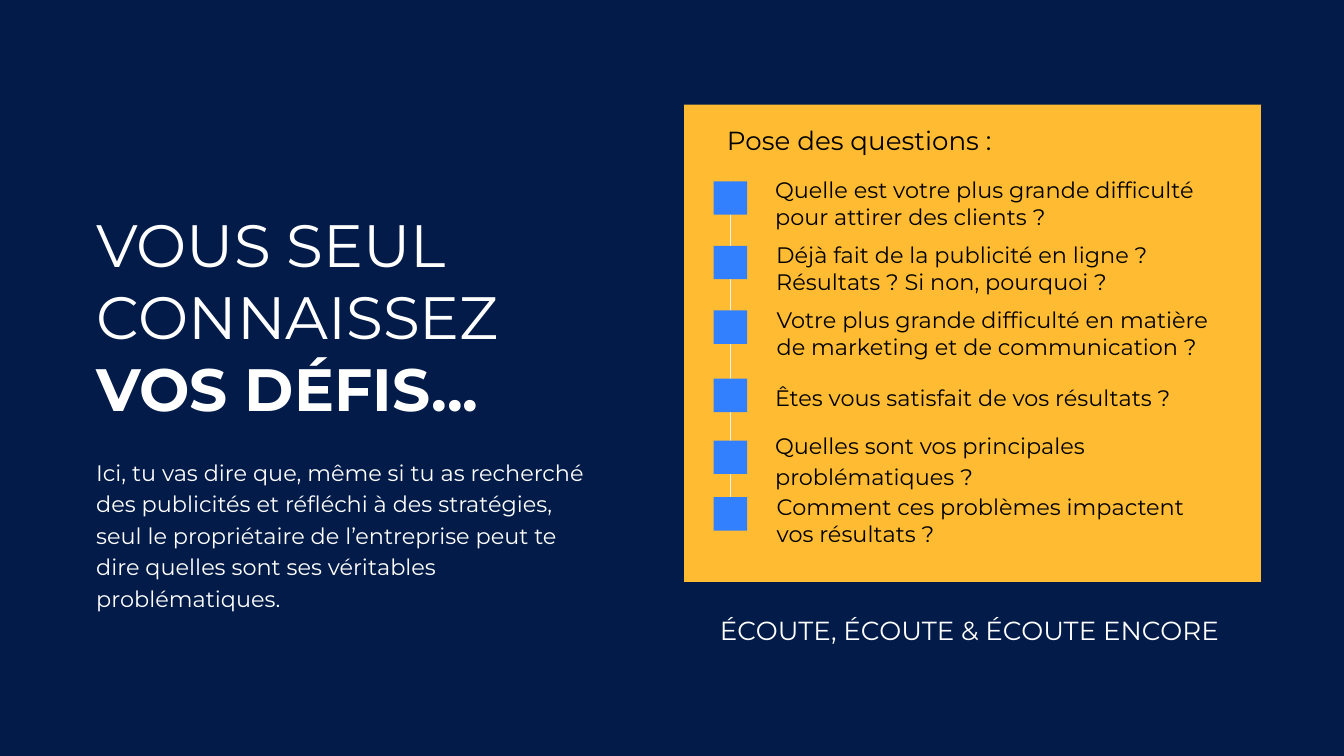
from dataclasses import dataclass

from lxml import etree
from pptx import Presentation
from pptx.dml.color import RGBColor
from pptx.enum import shapes, text
from pptx.oxml import ns
from pptx.util import Cm, Pt

NAVY, AMBER, BLUE = "031B49", "FFBC33", "3280FE"
WHITE, BLACK, PALE = "FFFFFF", "000000", "F2F2F2"
FONT = "Montserrat"
LOOSE = 1.17
MARKER_LEFT, MARKER_SIZE = 13.49, 0.63


@dataclass
class Box:
    """Left, top, width and height in centimetres."""
    left: float
    top: float
    width: float
    height: float

    def lengths(self) -> list:
        return [Cm(v) for v in (self.left, self.top, self.width, self.height)]


@dataclass
class Question:
    wording: str
    marker_top: float
    box: Box
    spacing: float | None = None


def paint(color_format, hex_color: str) -> None:
    color_format.rgb = RGBColor.from_string(hex_color)


def add_rectangle(slide, box: Box, color: str):
    rectangle = slide.shapes.add_shape(shapes.MSO_SHAPE.RECTANGLE, *box.lengths())
    rectangle.shadow.inherit = False
    rectangle.fill.solid()
    paint(rectangle.fill.fore_color, color)
    rectangle.line.fill.background()
    return rectangle


def add_text(slide, box: Box, runs: list, size: float, color: str,
             spacing: float | None = None, align=None, **frame_format) -> None:
    """Write one paragraph from (wording, bold) pairs."""
    frame = slide.shapes.add_textbox(*box.lengths()).text_frame
    settings = {
        "word_wrap": True,
        "auto_size": text.MSO_AUTO_SIZE.SHAPE_TO_FIT_TEXT,
        "margin_left": Cm(0.25), "margin_right": Cm(0.25),
        "margin_top": Cm(0.13), "margin_bottom": Cm(0.13),
    } | frame_format
    for name, value in settings.items():
        setattr(frame, name, value)
    paragraph = frame.paragraphs[0]
    for name, value in {"line_spacing": spacing, "alignment": align}.items():
        setattr(paragraph, name, value)
    for wording, bold in runs:
        run = paragraph.add_run()
        run.text = wording
        for name, value in {"name": FONT, "size": Pt(size), "bold": bold}.items():
            setattr(run.font, name, value)
        paint(run.font.color, color)


def add_timeline(slide, x: float, top: float, bottom: float):
    timeline = slide.shapes.add_connector(
        shapes.MSO_CONNECTOR.STRAIGHT, Cm(x), Cm(top), Cm(x), Cm(bottom))
    timeline.line.width = Pt(1)
    paint(timeline.line.color, PALE)
    etree.SubElement(timeline._element.spPr, ns.qn("a:effectLst"))
    return timeline


QUESTIONS = [
    Question("Quelle est votre plus grande difficulté pour attirer des clients ?",
             3.43, Box(14.4, 3.2, 8.97, 1.27)),
    Question("Déjà fait de la publicité en ligne ? Résultats ? Si non, pourquoi ?",
             4.65, Box(14.42, 4.43, 8.97, 1.27)),
    Question("Votre plus grande difficulté en matière de marketing et de communication ?",
             5.87, Box(14.43, 5.66, 8.97, 1.27)),
    Question("Êtes vous satisfait de vos résultats ?",
             7.16, Box(14.4, 7.13, 8.97, 0.76)),
    Question("Quelles sont vos principales problématiques ?",
             8.33, Box(14.4, 7.95, 8.97, 1.37), LOOSE),
    Question("Comment ces problèmes impactent vos résultats ?",
             9.4, Box(14.43, 9.2, 8.97, 1.27)),
]


def main() -> None:
    deck = Presentation()
    deck.slide_width, deck.slide_height = Cm(25.4), Cm(14.29)
    slide = deck.slides.add_slide(deck.slide_layouts[6])
    slide.background.fill.solid()
    paint(slide.background.fill.fore_color, NAVY)

    # Message on the left
    add_text(slide, Box(1.57, 2.64, 10.36, 5.61),
             [("VOUS SEUL CONNAISSEZ ", None), ("VOS DÉFIS...", True)], 32, WHITE,
             auto_size=text.MSO_AUTO_SIZE.NONE,
             vertical_anchor=text.MSO_ANCHOR.BOTTOM,
             margin_top=Cm(0.25), margin_bottom=Cm(0.25))
    add_text(slide, Box(1.57, 8.46, 9.91, 3.18),
             [("Ici, tu vas dire que, même si tu as recherché des publicités et réfléchi "
               "à des stratégies, seul le propriétaire de l’entreprise peut te dire "
               "quelles sont ses véritables problématiques.", None)], 12, WHITE, LOOSE)

    # Question panel
    add_rectangle(slide, Box(12.93, 1.98, 10.9, 9.02), AMBER)
    add_text(slide, Box(13.49, 2.13, 10.34, 0.86),
             [("Pose des questions :", None)], 14, BLACK, LOOSE)

    # Timeline behind its markers, then the questions
    timeline = add_timeline(slide, MARKER_LEFT + MARKER_SIZE / 2,
                            QUESTIONS[0].marker_top, 9.88)
    markers = []
    for question in QUESTIONS:
        marker_box = Box(MARKER_LEFT, question.marker_top, MARKER_SIZE, MARKER_SIZE)
        markers.append(add_rectangle(slide, marker_box, BLUE))
        add_text(slide, question.box, [(question.wording, None)], 12, BLACK,
                 question.spacing)
    timeline.begin_connect(markers[0], 0)

    # Closing advice
    add_text(slide, Box(12.04, 11.38, 12.7, 0.86),
             [("ÉCOUTE, ÉCOUTE & ÉCOUTE ENCORE ", None)], 14, WHITE, LOOSE,
             text.PP_ALIGN.CENTER)

    deck.save("out.pptx")


if __name__ == "__main__":
    main()
